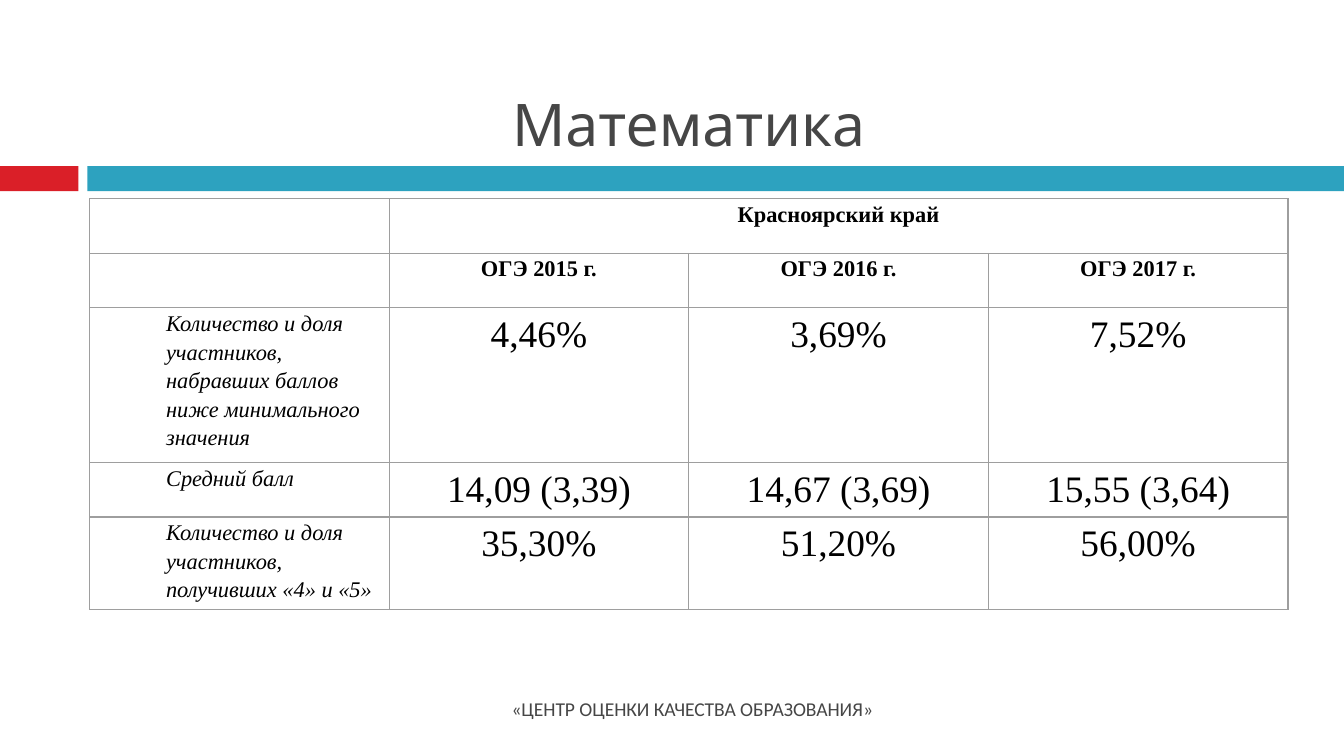
from lxml.etree import SubElement
from pptx import Presentation
from pptx.dml.color import RGBColor
from pptx.enum.shapes import MSO_SHAPE as Shape
from pptx.enum.text import MSO_ANCHOR as Anchor, PP_ALIGN as Align
from pptx.oxml.ns import qn
from pptx.util import Pt

TITLE = "Математика"
FOOTER = "«ЦЕНТР ОЦЕНКИ КАЧЕСТВА ОБРАЗОВАНИЯ»"
REGION = "Красноярский край"
EXAMS = ["ОГЭ 2015 г.", "ОГЭ 2016 г.", "ОГЭ 2017 г."]
RESULTS = [
    ("Количество и доля участников, набравших баллов ниже минимального значения",
     "4,46%", "3,69%", "7,52%"),
    ("Средний балл", "14,09 (3,39)", "14,67 (3,69)", "15,55 (3,64)"),
    ("Количество и доля участников, получивших «4» и «5»",
     "35,30%", "51,20%", "56,00%"),
]
BANDS = [(0, 42, "DA1F28"), (46.8, 673.2, "2DA2BF")]
GREY, BLACK, BORDER = "464646", "000000", "9E9E9E"
SERIF = "Times New Roman"
LEFT, WIDTH, ROW_HEIGHT = 48, 642, 29.25


def color(hex_value):
    return RGBColor.from_string(hex_value)


def write(frame, text, *, size, font, fill=BLACK, align=Align.CENTER,
          bold=False, italic=False, line=None, gap=None, indent=0):
    frame.word_wrap = True
    paragraph = frame.paragraphs[0]
    paragraph.alignment = align
    if line:
        paragraph.line_spacing = line
    if gap is not None:
        paragraph.space_before = paragraph.space_after = Pt(gap)
    if indent:
        properties = paragraph._p.get_or_add_pPr()
        properties.set("marL", str(Pt(indent)))
        properties.set("indent", "0")
    run = paragraph.add_run()
    run.text = text
    run.font.size = Pt(size)
    run.font.name = font
    run.font.bold = bold
    run.font.italic = italic
    run.font.color.rgb = color(fill)


def add_caption(slide, box, text, anchor, **style):
    frame = slide.shapes.add_textbox(*map(Pt, box)).text_frame
    frame.vertical_anchor = anchor
    write(frame, text, fill=GREY, **style)


def style_cell(cell):
    cell.margin_left = cell.margin_right = Pt(5)
    cell.margin_top = cell.margin_bottom = Pt(0)
    properties = cell._tc.get_or_add_tcPr()
    for side in ("lnL", "lnR", "lnT", "lnB"):
        edge = SubElement(properties, qn(f"a:{side}"), w=str(Pt(0.75)))
        paint = SubElement(edge, qn("a:solidFill"))
        SubElement(paint, qn("a:srgbClr"), val=BORDER)
    cell.fill.background()


def add_results(slide):
    rows = [("", REGION, "", ""), ("", *EXAMS), *RESULTS]
    columns = len(rows[0])
    table = slide.shapes.add_table(
        len(rows), columns, Pt(LEFT), Pt(106.5), Pt(WIDTH),
        Pt(ROW_HEIGHT * len(rows))).table
    table.first_row = table.horz_banding = False
    for column in table.columns:
        column.width = Pt(WIDTH / columns)
    heading = dict(size=12, bold=True)
    label = dict(size=12, italic=True, align=Align.LEFT, indent=36)
    value = dict(size=20)
    for r, row in enumerate(rows):
        table.rows[r].height = Pt(ROW_HEIGHT)
        for c, text in enumerate(row):
            cell = table.cell(r, c)
            style_cell(cell)
            if text:
                look = heading if r < 2 else value if c else label
                write(cell.text_frame, text, font=SERIF, line=1.15, gap=2, **look)
    table.cell(0, 1).merge(table.cell(0, columns - 1))


def main():
    deck = Presentation()
    deck.slide_width, deck.slide_height = Pt(720), Pt(405)
    slide = deck.slides.add_slide(deck.slide_layouts[6])
    for left, width, fill in BANDS:
        band = slide.shapes.add_shape(
            Shape.RECTANGLE, Pt(left), Pt(89), Pt(width), Pt(13.5))
        band.shadow.inherit = False
        band.fill.solid()
        band.fill.fore_color.rgb = color(fill)
        band.line.fill.background()
    add_caption(slide, (LEFT, 9.4, WIDTH, 79.2), TITLE, Anchor.BOTTOM,
                size=31.5, font="Cabin")
    add_results(slide)
    add_caption(slide, (LEFT, 369, 427, 21.6), FOOTER, Anchor.MIDDLE,
                size=10.5, font="Calibri", align=Align.RIGHT)
    deck.save("out.pptx")


if __name__ == "__main__":
    main()
